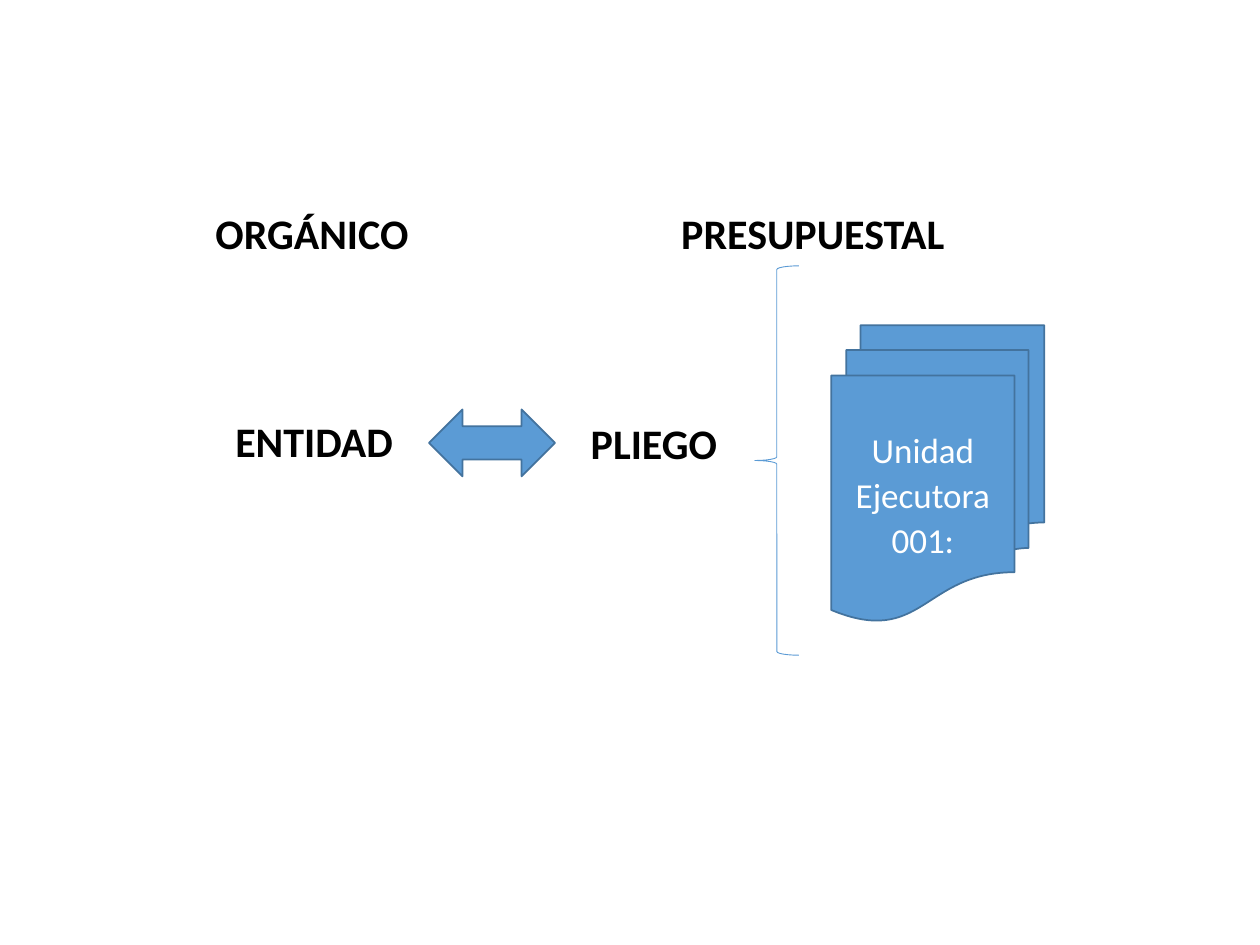
from pptx import Presentation
from pptx.dml.color import RGBColor
from pptx.enum.shapes import MSO_SHAPE
from pptx.enum.text import MSO_ANCHOR, MSO_AUTO_SIZE, PP_ALIGN
from pptx.util import Pt

BLUE, DARK_BLUE, BLACK, WHITE = "5B9BD5", "43739E", "000000", "FFFFFF"


def color(hex_string):
    return RGBColor.from_string(hex_string)


class SlideBuilder:
    font = "Calibri"

    def __init__(self, slide):
        self.slide = slide

    def format_runs(self, p, size, hex_string, bold=False):
        for r in p.runs:
            r.font.name = self.font
            r.font.size = Pt(size)
            r.font.bold = bold
            r.font.color.rgb = color(hex_string)

    def label(self, text, x, y, w, h=36):
        tb = self.slide.shapes.add_textbox(Pt(x), Pt(y), Pt(w), Pt(h))
        tf = tb.text_frame
        tf.word_wrap = True
        tf.auto_size = MSO_AUTO_SIZE.SHAPE_TO_FIT_TEXT
        tf.text = text
        self.format_runs(tf.paragraphs[0], 24, BLACK, bold=True)

    def shape(self, kind, x, y, w, h, line=DARK_BLUE, line_width=1, fill=BLUE):
        sp = self.slide.shapes.add_shape(kind, Pt(x), Pt(y), Pt(w), Pt(h))
        sp.shadow.inherit = False
        if fill:
            sp.fill.solid()
            sp.fill.fore_color.rgb = color(fill)
        else:
            sp.fill.background()
        sp.line.color.rgb = color(line)
        sp.line.width = Pt(line_width)
        return sp

    def documents(self, text, x, y, w, h):
        sp = self.shape(MSO_SHAPE.FLOWCHART_MULTIDOCUMENT, x, y, w, h)
        tf = sp.text_frame
        tf.word_wrap = True
        tf.vertical_anchor = MSO_ANCHOR.MIDDLE
        tf.text = text
        p = tf.paragraphs[0]
        p.alignment = PP_ALIGN.CENTER
        p.line_spacing = 1.07
        p.space_after = Pt(8)
        self.format_runs(p, 20, WHITE)


def main():
    prs = Presentation()
    prs.slide_width, prs.slide_height = Pt(720), Pt(540)
    s = SlideBuilder(prs.slides.add_slide(prs.slide_layouts[6]))

    s.shape(MSO_SHAPE.LEFT_BRACE, 431.3, 151.9, 25.2, 222.5,
            line=BLUE, line_width=0.5, fill=None)
    s.documents("Unidad Ejecutora 001:", 475, 185.8, 121.7, 169.2)
    s.label("ENTIDAD", 127.4, 234, 105.8)
    s.label("PLIEGO", 330.5, 235, 100.8)
    s.shape(MSO_SHAPE.LEFT_RIGHT_ARROW, 245.2, 234, 72, 38.2)
    s.label("ORGÁNICO", 116, 115.2, 129)
    s.label("PRESUPUESTAL", 382.2, 115.2, 176.4)

    prs.save("out.pptx")


if __name__ == "__main__":
    main()
